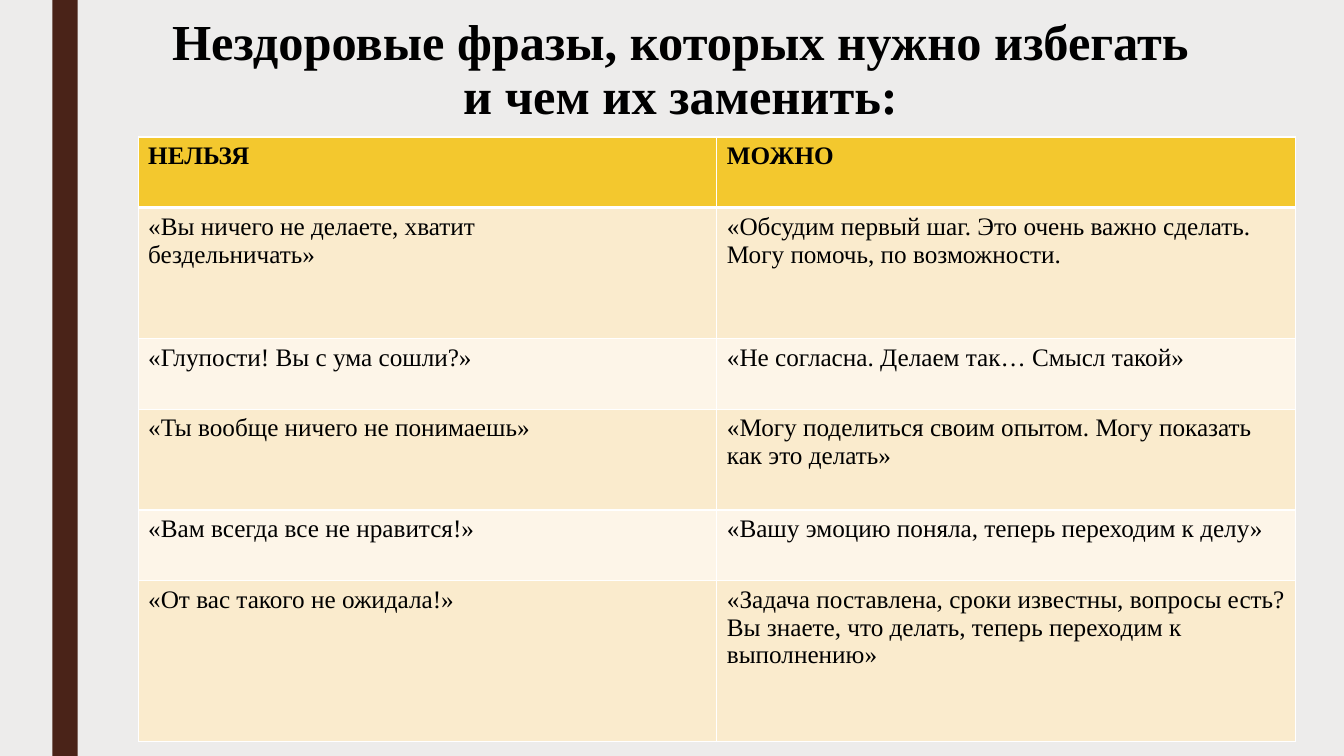
"""Build the slide that pairs unhealthy phrases with better replacements."""
import dataclasses
import typing

import lxml.etree
import pptx
import pptx.dml.color
import pptx.enum.shapes
import pptx.enum.text
import pptx.oxml.ns
import pptx.util

Inches = pptx.util.Inches
Pt = pptx.util.Pt
qn = pptx.oxml.ns.qn


@dataclasses.dataclass(frozen=True)
class Theme:
    """Colours, typeface and type sizes."""
    background: str = "EDECEB"
    stripe: str = "4A2318"
    header: str = "F3C82E"
    bands: tuple[str, str] = ("FAEBCD", "FDF5E8")
    border: str = "FFFFFF"
    ink: str = "000000"
    typeface: str = "Times New Roman"
    title_size: int = 36
    table_size: int = 18


class PhrasePair(typing.NamedTuple):
    """One table row: what to avoid, what to say, and the row height."""
    avoid: str
    say: str
    height: float


THEME = Theme()
TITLE = "Нездоровые фразы, которых нужно избегать и чем их заменить:"
COLUMN_WIDTH = 5.74
PHRASES = [
    PhrasePair("НЕЛЬЗЯ", "МОЖНО", 0.7),
    PhrasePair("«Вы ничего не делаете, хватит\vбездельничать»",
               "«Обсудим первый шаг. Это очень важно сделать. Могу помочь, по возможности.", 1.3),
    PhrasePair("«Глупости! Вы с ума сошли?»", "«Не согласна. Делаем так… Смысл такой»", 0.7),
    PhrasePair("«Ты вообще ничего не понимаешь»",
               "«Могу поделиться своим опытом. Могу показать как это делать»", 1.0),
    PhrasePair("«Вам всегда все не нравится!»",
               "«Вашу эмоцию поняла, теперь переходим к делу»", 0.7),
    PhrasePair("«От вас такого не ожидала!»",
               "«Задача поставлена, сроки известны, вопросы есть? "
               "Вы знаете, что делать, теперь переходим к выполнению»", 1.6),
]


def rgb(value: str) -> pptx.dml.color.RGBColor:
    """Turn a hex string into a colour."""
    return pptx.dml.color.RGBColor.from_string(value)


def apply(target: typing.Any, formats: dict[str, typing.Any]) -> None:
    """Set every attribute listed in the formats."""
    for name, value in formats.items():
        setattr(target, name, value)


def paint(fill: typing.Any, colour: str) -> None:
    """Give a solid fill."""
    fill.solid()
    fill.fore_color.rgb = rgb(colour)


def write(frame: typing.Any, text: str, size: int, bold: bool) -> None:
    """Write text in the theme typeface."""
    frame.text = text
    for run in frame.paragraphs[0].runs:
        apply(run.font, {"name": THEME.typeface, "size": Pt(size), "bold": bold})
        run.font.color.rgb = rgb(THEME.ink)


def add_borders(cell: typing.Any, bottom: float, top: float) -> None:
    """Outline a cell, with its own bottom and top line widths."""
    properties = cell._tc.get_or_add_tcPr()
    widths = {"a:lnL": 1, "a:lnR": 1, "a:lnT": top, "a:lnB": bottom}
    for position, (tag, width) in enumerate(widths.items()):
        line = lxml.etree.Element(qn(tag), w=str(Pt(width)))
        solid = lxml.etree.SubElement(line, qn("a:solidFill"))
        lxml.etree.SubElement(solid, qn("a:srgbClr"), val=THEME.border)
        properties.insert(position, line)


def add_stripe(slide: typing.Any) -> None:
    """Draw the dark vertical stripe."""
    stripe = slide.shapes.add_shape(pptx.enum.shapes.MSO_SHAPE.RECTANGLE,
                                    Inches(0.52), 0, Inches(0.25), Inches(7.5))
    stripe.shadow.inherit = False
    paint(stripe.fill, THEME.stripe)
    stripe.line.fill.background()


def set_title(slide: typing.Any) -> None:
    """Place and format the title placeholder."""
    title = slide.shapes.title
    apply(title, {"left": Inches(1.5), "top": Inches(0.12),
                  "width": Inches(10.5), "height": Inches(1.26)})
    apply(title.text_frame, {"word_wrap": True,
                             "auto_size": pptx.enum.text.MSO_AUTO_SIZE.NONE,
                             "vertical_anchor": pptx.enum.text.MSO_ANCHOR.TOP})
    write(title.text_frame, TITLE, THEME.title_size, True)
    apply(title.text_frame.paragraphs[0], {"alignment": pptx.enum.text.PP_ALIGN.CENTER,
                                           "line_spacing": 0.89})


def add_phrases(slide: typing.Any) -> None:
    """Draw the two-column table of phrases."""
    height = sum(pair.height for pair in PHRASES)
    table = slide.shapes.add_table(len(PHRASES), 2, Inches(1.37), Inches(1.36),
                                   Inches(2 * COLUMN_WIDTH), Inches(height)).table
    for column in table.columns:
        column.width = Inches(COLUMN_WIDTH)
    for index, pair in enumerate(PHRASES):
        table.rows[index].height = Inches(pair.height)
        is_header = index == 0
        colour = THEME.header if is_header else THEME.bands[(index - 1) % 2]
        for cell, phrase in zip(table.rows[index].cells, (pair.avoid, pair.say)):
            write(cell.text_frame, phrase, THEME.table_size, is_header)
            paint(cell.fill, colour)
            add_borders(cell, bottom=3 if is_header else 1, top=3 if index == 1 else 1)


def main() -> None:
    """Build and save the presentation."""
    presentation = pptx.Presentation()
    apply(presentation, {"slide_width": Inches(13.33), "slide_height": Inches(7.5)})
    slide = presentation.slides.add_slide(presentation.slide_layouts.get_by_name("Title Only"))
    paint(slide.background.fill, THEME.background)
    add_stripe(slide)
    set_title(slide)
    add_phrases(slide)
    presentation.save("out.pptx")


if __name__ == "__main__":
    main()
